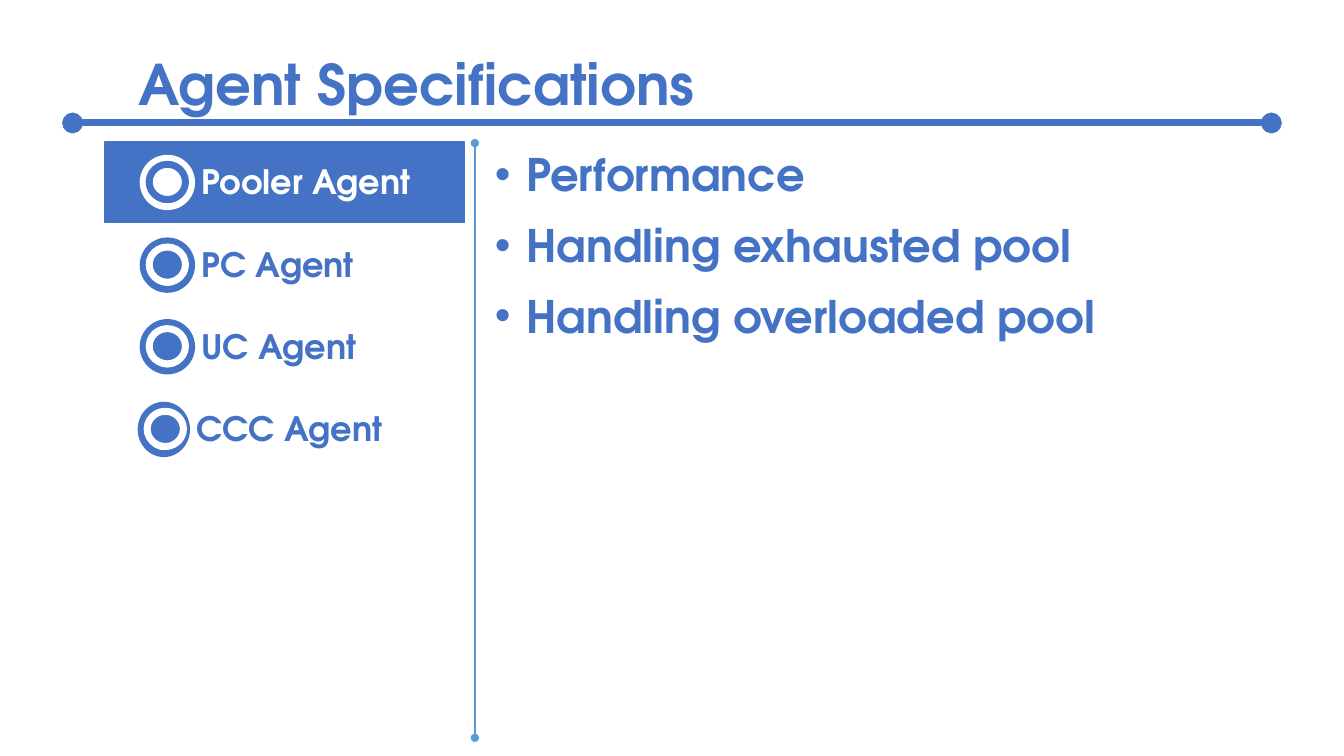
from lxml.etree import SubElement
from pptx import Presentation
from pptx.dml.color import RGBColor
from pptx.enum.shapes import MSO_CONNECTOR, MSO_SHAPE
from pptx.enum.text import MSO_ANCHOR, MSO_AUTO_SIZE, PP_ALIGN
from pptx.oxml.ns import qn
from pptx.util import Pt

PX = 9144  # EMU per px, 100 px to the inch
BLUE, SKY, WHITE = "4472C4", "5B9BD5", "FFFFFF"
FONT = "TeX Gyre Adventor"
AGENTS = ["Pooler Agent", "PC Agent", "UC Agent", "CCC Agent"]
POINTS = ["Performance", "Handling exhausted pool", "Handling overloaded pool"]


def px(*nums):
    return [round(n * PX) for n in nums]


def paint(color, tone):
    color.rgb = RGBColor.from_string(tone)


def setup(frame, wrap=True):
    frame.word_wrap = wrap
    frame.auto_size = MSO_AUTO_SIZE.SHAPE_TO_FIT_TEXT
    frame.vertical_anchor = MSO_ANCHOR.TOP


def write(para, text, size, tone, align=PP_ALIGN.LEFT):
    para.alignment = align
    run = para.add_run()
    run.text = text
    run.font.name, run.font.size, run.font.bold = FONT, Pt(size), True
    paint(run.font.color, tone)


def draw(group, kind, box, fill, line, width):
    shape = group.shapes.add_shape(kind, *px(*box))
    shape.shadow.inherit = False
    if fill:
        shape.fill.solid()
        paint(shape.fill.fore_color, fill)
    else:
        shape.fill.background()
    paint(shape.line.color, line)
    shape.line.width = Pt(width)


def rule(slide, start, end, tone, width):
    line = slide.shapes.add_connector(MSO_CONNECTOR.STRAIGHT, *px(*start, *end))
    paint(line.line.color, tone)
    line.line.width = Pt(width)
    props = line.line._get_or_add_ln()
    for tip in ("a:headEnd", "a:tailEnd"):
        SubElement(props, qn(tip), type="oval")
    SubElement(line._element.spPr, qn("a:effectLst"))


# Title with the heavy rule below it
def header(slide, left, top, width, height):
    rule(slide, (72, 122), (1261, 122), BLUE, 5)
    title = slide.shapes.title
    title.left, title.top, title.width, title.height = px(left, top, width, height)
    setup(title.text_frame, wrap=False)
    write(title.text_frame.paragraphs[0], "Agent Specifications", 40, BLUE)


# One menu entry: ring, label and dot, on a bar when it is active
def entry(slide, name, left, top, ring, wide, active):
    group = slide.shapes.add_group_shape()
    tone, back = (WHITE, BLUE) if active else (BLUE, WHITE)
    if active:
        bar = (left - 38, top - 16, 357, 80)
        draw(group, MSO_SHAPE.RECTANGLE, bar, BLUE, BLUE, 1)
    draw(group, MSO_SHAPE.OVAL, (left, top, ring, 48), None, tone, 5)
    label = group.shapes.add_textbox(*px(left + ring, top - 2, wide, 50))
    setup(label.text_frame)
    write(label.text_frame.paragraphs[0], name, 24, tone, PP_ALIGN.JUSTIFY)
    draw(group, MSO_SHAPE.OVAL, (left + 6, top + 6, 36, 35), tone, back, 5)


# Menu of agents, evenly spaced; the last entry sits a little further left
def menu(slide, left, top, height):
    step = height / (len(AGENTS) - 1)
    for i, name in enumerate(AGENTS):
        last = name == AGENTS[-1]
        shift, ring, wide = (2, 45, 252) if last else (0, 48, 247)
        entry(slide, name, left - shift, top + round(i * step), ring, wide, i == 0)


# Bulleted points to the right of the thin divider
def body(slide, left, top, width, height):
    box = slide.shapes.add_textbox(*px(left, top, width, height))
    frame = box.text_frame
    setup(frame)
    for i, point in enumerate(POINTS):
        para = frame.add_paragraph() if i else frame.paragraphs[0]
        para.space_before = para.space_after = Pt(6)
        write(para, point, 32, BLUE)
        props = para._p.get_or_add_pPr()
        props.set("marL", str(31 * PX))
        props.set("indent", str(-31 * PX))
        SubElement(props, qn("a:buFont"), typeface="Arial")
        SubElement(props, qn("a:buChar"), char="•")
    rule(slide, (left - 10, top + 1), (left - 10, top + 591), SKY, 1)


def main():
    deck = Presentation()
    deck.slide_width, deck.slide_height = px(1333, 750)
    slide = deck.slides.add_slide(deck.slide_layouts[5])
    header(slide, 127, 44, 579, 77)
    menu(slide, 142, 157, 245)
    body(slide, 481, 141, 780, 205)
    deck.save("out.pptx")


if __name__ == "__main__":
    main()
